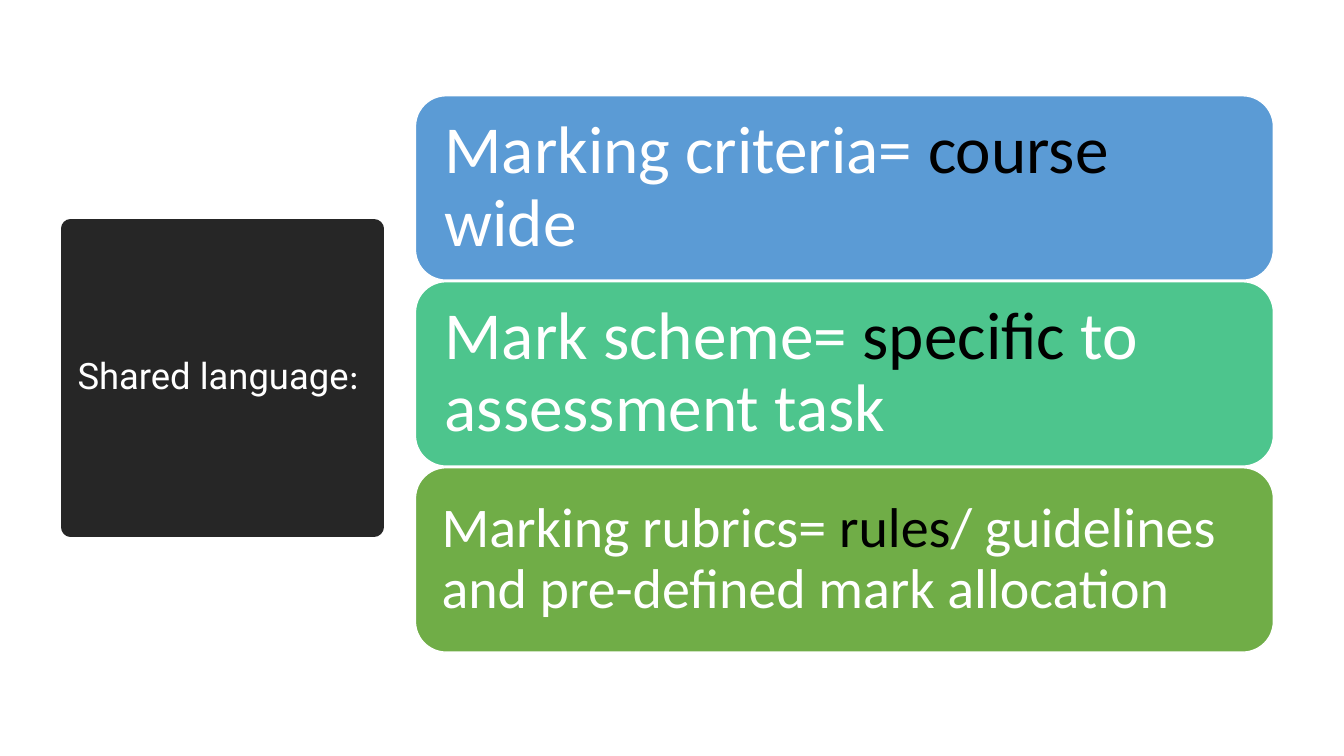
from lxml import etree
from pptx import Presentation
from pptx.dml.color import RGBColor
from pptx.enum.shapes import MSO_SHAPE as Shape
from pptx.enum.text import MSO_ANCHOR as Anchor, PP_ALIGN as Align
from pptx.oxml.ns import qn
from pptx.util import Inches, Pt

COLORS = {
    "dark": "262626",
    "blue": "5B9BD5",
    "mint": "4DC58D",
    "green": "70AD47",
    "white": "FFFFFF",
    "black": "000000",
}


def add_block(kind, left, top, width, height, fill, line, line_width, inset):
    block = slide.shapes.add_shape(
        kind, Inches(left), Inches(top), Inches(width), Inches(height))
    block.shadow.inherit = False
    block.fill.solid()
    block.fill.fore_color.rgb = RGBColor.from_string(COLORS[fill])
    block.line.color.rgb = RGBColor.from_string(COLORS[line])
    block.line.width = Pt(line_width)
    frame = block.text_frame
    frame.word_wrap = True
    frame.vertical_anchor = Anchor.MIDDLE
    frame.margin_left = frame.margin_right = Inches(inset)
    frame.margin_top = frame.margin_bottom = Inches(inset)
    frame.paragraphs[0].line_spacing = 0.9
    return block


def add_run(paragraph, text, color, font=None):
    run = paragraph.add_run()
    run.text = text
    run.font.color.rgb = RGBColor.from_string(COLORS[color])
    if font:
        run.font.name = font


prs = Presentation()
prs.slide_width, prs.slide_height = Inches(13.33), Inches(7.5)
slide = prs.slides.add_slide(prs.slide_layouts[6])

# Title block, with a thick round-cornered outline
title = add_block(Shape.RECTANGLE, 0.7, 2.27, 3.01, 2.96, "dark", "dark", 13.75, 0.05)
etree.SubElement(title.line._get_or_add_ln(), qn("a:round"))
heading = title.text_frame.paragraphs[0]
heading.alignment = Align.CENTER
heading.font.size = Pt(26)
add_run(heading, "Shared language", "white", "Roboto")
add_run(heading, ": ", "white", "Calibri")

# Definitions: fill, text size, inset, term, key word, remainder
definitions = [
    ("blue", 48, 0.2, "Marking criteria= ", "course", " wide"),
    ("mint", 48, 0.2, "Mark scheme= ", "specific ", "to assessment task"),
    ("green", 40, 0.17, "Marking rubrics= ", "rules",
     "/ guidelines and pre-defined mark allocation"),
]
first_top, last_top = 0.95, 4.64
pitch = (last_top - first_top) / (len(definitions) - 1)
for row, (fill, size, inset, term, key_word, remainder) in enumerate(definitions):
    card = add_block(Shape.ROUNDED_RECTANGLE, 4.12, first_top + row * pitch,
                     8.51, 1.83, fill, "white", 1, inset)
    definition = card.text_frame.paragraphs[0]
    definition.alignment = Align.LEFT
    definition.font.size = Pt(size)
    definition.font.name = "Calibri"
    add_run(definition, term, "white")
    add_run(definition, key_word, "black")
    add_run(definition, remainder, "white")

prs.save("out.pptx")
